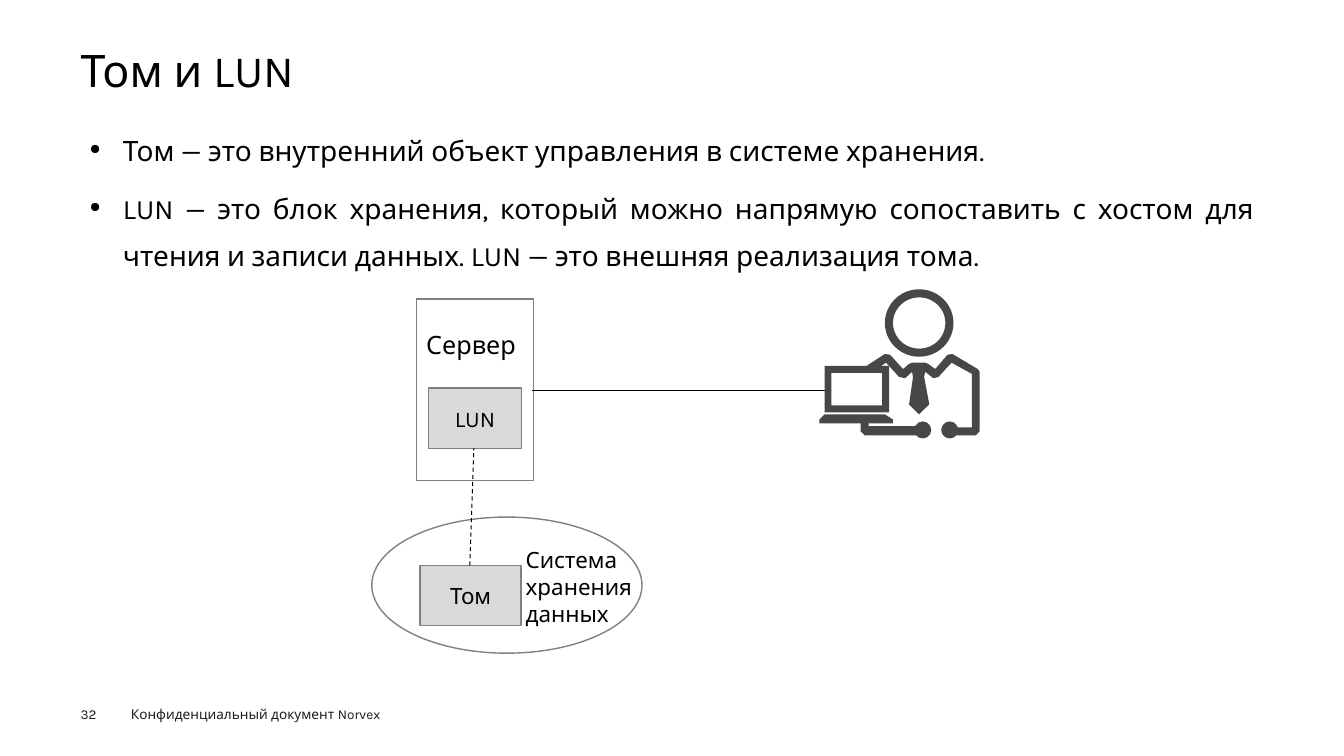
from lxml import etree
from pptx import Presentation
from pptx.dml.color import RGBColor
from pptx.enum.dml import MSO_LINE
from pptx.enum.shapes import MSO_CONNECTOR, MSO_SHAPE
from pptx.enum.text import MSO_ANCHOR, MSO_AUTO_SIZE, PP_ALIGN
from pptx.oxml.ns import qn
from pptx.util import Cm, Pt

RECTANGLE, OVAL = MSO_SHAPE.RECTANGLE, MSO_SHAPE.OVAL
DONUT, FRAME = MSO_SHAPE.DONUT, MSO_SHAPE.FRAME
STRAIGHT, DASH = MSO_CONNECTOR.STRAIGHT, MSO_LINE.DASH
MIDDLE, GROW = MSO_ANCHOR.MIDDLE, MSO_AUTO_SIZE.SHAPE_TO_FIT_TEXT
CENTER, JUSTIFY = PP_ALIGN.CENTER, PP_ALIGN.JUSTIFY

BLACK = RGBColor(0x00, 0x00, 0x00)
INK = RGBColor(0x1D, 0x1D, 0x1B)
ICON = RGBColor(0x47, 0x47, 0x47)
OUTLINE = RGBColor(0x80, 0x80, 0x80)
BOX = RGBColor(0xD9, 0xD9, 0xD9)
WHITE = RGBColor(0xFF, 0xFF, 0xFF)

POINTS = (
    "Том — это внутренний объект управления в системе хранения.",
    "LUN — это блок хранения, который можно напрямую сопоставить с хостом "
    "для чтения и записи данных. LUN — это внешняя реализация тома.",
)

LAPTOP_BASE = [(22.3, 10.44), (20.78, 10.44), (20.65, 10.57),
               (20.65, 10.67), (22.5, 10.67), (22.5, 10.57)]
SLEEVE = [(23.32, 10.97), (21.79, 10.97), (21.69, 10.87), (21.69, 10.62),
          (21.89, 10.62), (21.89, 10.74), (23.32, 10.74)]
JACKET = [(24.59, 10.97), (24.05, 10.97), (24.05, 10.77), (24.49, 10.77),
          (24.49, 9.42), (23.98, 9.14), (23.65, 9.5), (23.52, 9.53),
          (23.29, 9.35), (23.01, 9.35), (22.81, 9.53), (22.66, 9.5),
          (22.33, 9.14), (21.95, 9.4), (21.84, 9.22), (22.3, 8.92),
          (22.43, 8.94), (22.76, 9.3), (22.91, 9.17), (22.99, 9.14),
          (23.32, 9.14), (23.39, 9.17), (23.57, 9.3), (23.88, 8.94),
          (24, 8.92), (24.64, 9.3), (24.69, 9.37), (24.69, 10.87)]
TIE = [(22.96, 9.25), (23.01, 9.5), (22.91, 10.19), (23.16, 10.44),
       (23.42, 10.19), (23.29, 9.5), (23.34, 9.25)]


class Board:
    """Draws styled elements on the current slide, with lengths in centimetres."""

    font = "Karla"

    def __init__(self, slide):
        self.shapes = slide.shapes

    def styled_run(self, paragraph, text, size, color=BLACK):
        run = paragraph.add_run()
        run.text = text
        run.font.name = self.font
        run.font.size = Pt(size)
        run.font.color.rgb = color

    def frame(self, place, insets=(0.25, 0.13), grow=False):
        frame = self.shapes.add_textbox(*map(Cm, place)).text_frame
        frame.word_wrap = True
        frame.margin_left = frame.margin_right = Cm(insets[0])
        frame.margin_top = frame.margin_bottom = Cm(insets[1])
        if grow:
            frame.auto_size = GROW
        return frame

    def label(self, place, text, size, color=BLACK, **options):
        paragraph = self.frame(place, **options).paragraphs[0]
        self.styled_run(paragraph, text, size, color)
        return paragraph

    def bullets(self, place, points, size):
        frame = self.frame(place, insets=(0.23, 0.1))
        for index, point in enumerate(points):
            paragraph = frame.add_paragraph() if index else frame.paragraphs[0]
            properties = paragraph._p.get_or_add_pPr()
            properties.set("marL", str(Cm(0.84)))
            properties.set("indent", str(-Cm(0.84)))
            etree.SubElement(properties, qn("a:buSzPct"), val="50000")
            etree.SubElement(properties, qn("a:buChar"), char="●")
            paragraph.alignment = JUSTIFY
            paragraph.line_spacing = 1.4
            if index:
                paragraph.space_before = Pt(7.9)
            self.styled_run(paragraph, point, size)

    def paint(self, shape, fill, outline):
        shape.shadow.inherit = False
        if fill is None:
            shape.fill.background()
        else:
            shape.fill.solid()
            shape.fill.fore_color.rgb = fill
        if outline is None:
            shape.line.fill.background()
        else:
            shape.line.color.rgb = outline
            shape.line.width = Pt(1)

    def shape(self, kind, place, fill=None, outline=None, text=None, rim=None):
        shape = self.shapes.add_shape(kind, *map(Cm, place))
        self.paint(shape, fill, outline)
        if rim is not None:
            shape.adjustments[0] = rim
        if text:
            shape.text_frame.vertical_anchor = MIDDLE
            paragraph = shape.text_frame.paragraphs[0]
            paragraph.alignment = CENTER
            self.styled_run(paragraph, text, 16)

    def polygon(self, points, fill):
        start, *rest = [(Cm(x), Cm(y)) for x, y in points]
        builder = self.shapes.build_freeform(*start)
        builder.add_line_segments(rest, close=True)
        self.paint(builder.convert_to_shape(), fill, None)

    def line(self, ends, dash=None):
        line = self.shapes.add_connector(STRAIGHT, *map(Cm, ends))
        line.line.color.rgb = BLACK
        line.line.width = Pt(0.75)
        if dash:
            line.line.dash_style = dash
        etree.SubElement(line._element.spPr, qn("a:effectLst"))

    def start_group(self):
        self.shapes = self.shapes.add_group_shape().shapes


def main():
    deck = Presentation()
    deck.slide_width, deck.slide_height = Cm(33.87), Cm(19.05)
    board = Board(deck.slides.add_slide(deck.slide_layouts[6]))

    board.label((3.05, 17.65, 7.26, 0.66), "Конфиденциальный документ Norvex",
                9.7, INK, grow=True)
    board.label((2.03, 17.78, 1.4, 0.41), "32", 9.7, INK, insets=(0, 0), grow=True)
    title = board.label((2.03, 1.24, 29.79, 1.37), "Том и LUN", 32, insets=(0, 0))
    title.line_spacing = 0.9
    board.bullets((2.03, 2.92, 29.79, 13.54), POINTS, 20)

    board.shape(OVAL, (9.37, 13.03, 6.81, 3.43), outline=OUTLINE)
    board.shape(RECTANGLE, (10.59, 14.25, 2.54, 1.52), BOX, OUTLINE, "Том")
    board.shape(RECTANGLE, (10.49, 7.54, 2.95, 4.57), WHITE, OUTLINE)
    board.shape(RECTANGLE, (10.8, 9.78, 2.34, 1.52), BOX, OUTLINE, "LUN")
    board.line((11.84, 14.25, 11.94, 11.3), DASH)
    board.label((10.49, 8.18, 2.97, 1.12), "Сервер", 18, grow=True)
    board.label((13, 13.64, 3.38, 0.94), "Система хранения данных", 16, grow=True)
    board.line((13.41, 9.83, 20.78, 9.83))

    board.start_group()
    board.shape(DONUT, (22.3, 7.29, 1.73, 1.7), ICON, rim=0.12)
    board.shape(FRAME, (20.78, 9.22, 1.63, 1.17), ICON, rim=0.15)
    for outline in (LAPTOP_BASE, SLEEVE, JACKET, TIE):
        board.polygon(outline, ICON)
    for hand_left in (23.04, 23.72):
        board.shape(OVAL, (hand_left, 10.62, 0.43, 0.43), ICON)

    deck.save("out.pptx")


if __name__ == "__main__":
    main()
